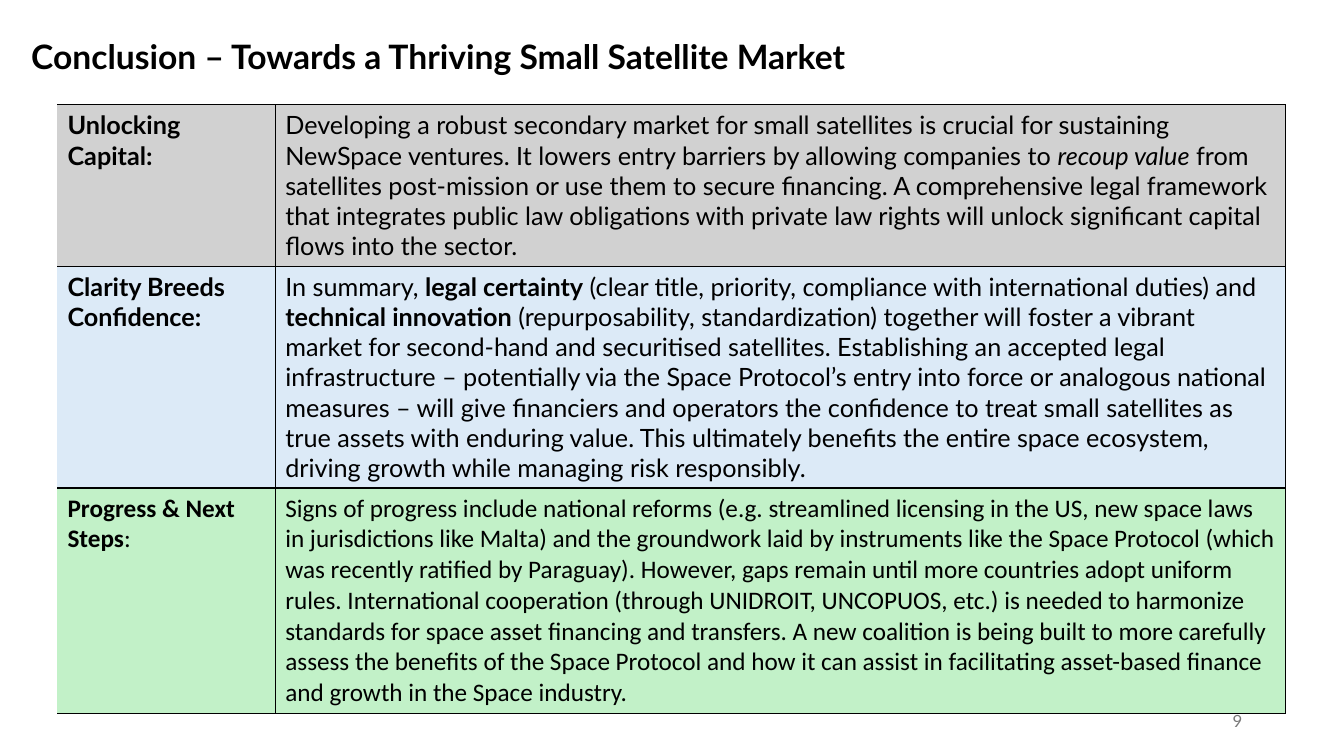
from lxml.etree import SubElement
from pptx import Presentation
from pptx.dml.color import RGBColor
from pptx.enum.text import MSO_ANCHOR, PP_ALIGN
from pptx.oxml.ns import qn
from pptx.util import Inches, Pt


def write(para, text, size=18, font="Lato", color="000000", **form):
    """Add one run; form holds further font values such as bold."""
    run = para.add_run()
    run.text = text
    look = {"size": Pt(size), "name": font, "bold": False, "italic": False} | form
    for key, value in look.items():
        setattr(run.font, key, value)
    run.font.color.rgb = RGBColor.from_string(color)


def edge(cell, sides):
    """Draw black one-point borders on the sides named, hide the others."""
    props = cell._tc.get_or_add_tcPr()
    for side in "LRTB":
        line = SubElement(props, qn("a:ln" + side), w=str(Pt(1)))
        if side in sides:
            fill = SubElement(line, qn("a:solidFill"))
            SubElement(fill, qn("a:srgbClr"), val="000000")
        else:
            SubElement(line, qn("a:noFill"))


BOLD = {"bold": True}
CALIBRI = {"font": "Calibri"}

# Each row: fill, height in inches, runs of the label, runs of the body
ROWS = [
    ("D1D1D1", 1.6, [("Unlocking Capital:", BOLD)], [
        ("Developing a robust secondary market for small satellites is crucial for "
         "sustaining NewSpace ventures. It lowers entry barriers by allowing "
         "companies to ", {}),
        ("recoup value", {"italic": True}),
        (" from satellites post-mission or use them to secure financing. A "
         "comprehensive legal framework that integrates public law obligations with "
         "private law rights will unlock significant capital flows into the sector.", {}),
    ]),
    ("DCEAF7", 2.2, [("Clarity Breeds Confidence:", BOLD)], [
        ("In summary, ", {}),
        ("legal certainty", BOLD),
        (" (clear title, priority, compliance with international duties) and ", {}),
        ("technical innovation", BOLD),
        (" (repurposability, standardization) together will foster a vibrant market "
         "for second-hand and securitised satellites. Establishing an accepted legal "
         "infrastructure – potentially via the Space Protocol’s entry into force or "
         "analogous national measures – will give financiers and operators the "
         "confidence to treat small satellites as true assets with enduring value. "
         "This ultimately benefits the entire space ecosystem, driving growth while "
         "managing risk responsibly.", {}),
    ]),
    ("C2F1C8", 2.2, [("Progress & Next Steps", BOLD | CALIBRI), (":", CALIBRI)], [
        ("Signs of progress include national reforms (e.g. streamlined licensing in "
         "the US, new space laws in jurisdictions like Malta) and the groundwork laid "
         "by instruments like the Space Protocol (which was recently ratified by "
         "Paraguay). However, gaps remain until more countries adopt uniform rules. "
         "International cooperation (through UNIDROIT, UNCOPUOS, etc.) is needed to "
         "harmonize standards for space asset financing and transfers. A new coalition "
         "is being built to more carefully assess the benefits of the Space Protocol "
         "and how it can assist in facilitating asset-based finance and growth in the "
         "Space industry.", CALIBRI),
    ]),
]
COLS = [2.16, 10.02]

deck = Presentation()
deck.slide_width, deck.slide_height = Inches(13.33), Inches(7.5)
slide = deck.slides.add_slide(deck.slide_layouts[5])

title = slide.shapes.title
title.left, title.top, title.width, title.height = map(Inches, (0.21, 0.31, 12.94, 0.5))
title.text_frame.vertical_anchor = MSO_ANCHOR.TOP
head = title.text_frame.paragraphs[0]
head.alignment = PP_ALIGN.LEFT
write(head, "Conclusion – Towards a Thriving Small Satellite Market", 24, bold=True)

total = sum(row[1] for row in ROWS)
table = slide.shapes.add_table(
    len(ROWS), len(COLS), *map(Inches, (0.57, 1.04, sum(COLS), total))).table
table.first_row = table.horz_banding = False
for col, width in zip(table.columns, COLS):
    col.width = Inches(width)

for row, (fill, height, *texts) in zip(table.rows, ROWS):
    row.height = Inches(height)
    for cell, runs, sides in zip(row.cells, texts, ("RTB", "LRTB")):
        edge(cell, sides)
        cell.fill.solid()
        cell.fill.fore_color.rgb = RGBColor.from_string(fill)
        for text, form in runs:
            write(cell.text_frame.paragraphs[0], text, **form)

frame = slide.shapes.add_textbox(*map(Inches, (9.42, 6.95, 3, 0.4))).text_frame
frame.word_wrap = True
frame.vertical_anchor = MSO_ANCHOR.MIDDLE
number = frame.paragraphs[0]
number.alignment = PP_ALIGN.RIGHT
write(number, "9", 12, color="797979")

deck.save("out.pptx")
